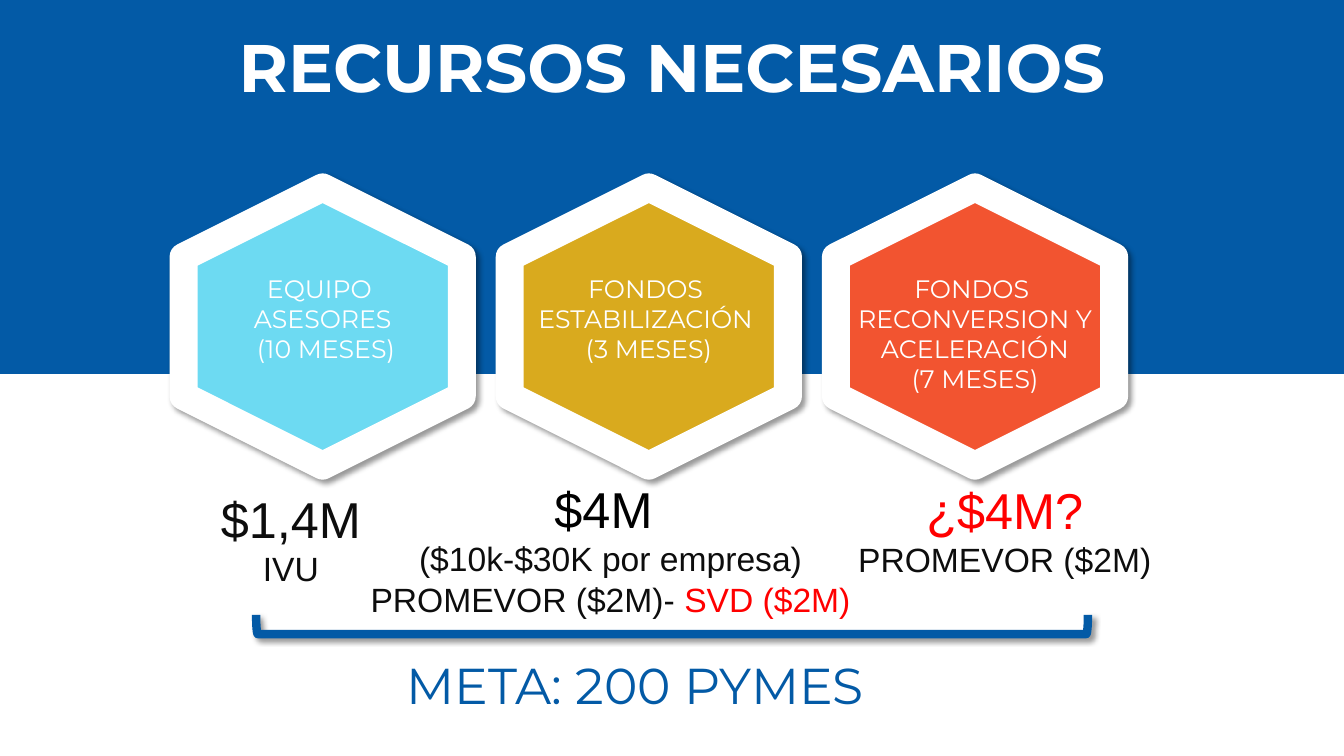
from pptx import Presentation
from pptx.dml.color import RGBColor
from pptx.enum.shapes import MSO_SHAPE as Preset
from pptx.enum.text import MSO_ANCHOR as Anchor, PP_ALIGN as Align
from pptx.oxml import parse_xml
from pptx.oxml.ns import nsdecls, qn
from pptx.util import Inches, Pt

BLUE = RGBColor(0x03, 0x5A, 0xA6)
CYAN = RGBColor(0x6D, 0xDA, 0xF2)
GOLD = RGBColor(0xD9, 0xAA, 0x1E)
ORANGE = RGBColor(0xF2, 0x54, 0x30)
WHITE = RGBColor(0xFF, 0xFF, 0xFF)
BLACK = RGBColor(0, 0, 0)
INK = RGBColor(0x0D, 0x0D, 0x0D)
RED = RGBColor(0xFF, 0, 0)

HEAD_FONT, BODY_FONT = "Montserrat", "Arial"
PAGE_WIDTH, PAGE_HEIGHT = 13.33, 7.5
HEXAGON_SIDE, HEXAGON_STEP = 2.76, 3.235
LABEL_WIDTH = 2.99

# Colour, label lines, box of the amounts, and amount lines as (size, spans)
RESOURCES = [
    (CYAN, ["EQUIPO ", "ASESORES", " (10 MESES)"], (1.81, 4.84, 2.15, 1.0),
     [(36, [("$1,4M", INK)]), (24, [("IVU", INK)])]),
    (GOLD, ["FONDOS ", "ESTABILIZACIÓN ", "(3 MESES)"], (3.5, 4.74, 5.11, 1.4),
     [(36, [("$4M ", BLACK)]),
      (24, [("($10k-$30K por empresa)", INK)]),
      (24, [("PROMEVOR ($2M)-", INK), (" SVD ($2M)", RED)])]),
    (ORANGE, ["FONDOS ", "RECONVERSION Y ACELERACIÓN", "(7 MESES)"],
     (8.29, 4.75, 3.35, 1.0),
     [(36, [("¿$4M?", RED)]), (24, [("PROMEVOR ($2M)", INK)])]),
]


def add_soft_shadow(shape):
    shape.shadow.inherit = False
    effects = shape.element.spPr.find(qn("a:effectLst"))
    effects.append(parse_xml(
        f'<a:outerShdw {nsdecls("a")} blurRad="{Pt(4)}" dist="{Pt(3)}" '
        'dir="2700000" algn="tl" rotWithShape="0"><a:srgbClr val="000000">'
        '<a:alpha val="40000"/></a:srgbClr></a:outerShdw>'))


def add_text(page, box, lines, font, anchor=Anchor.TOP, bold=False,
             spacing=None, inset=0.05):
    """Write centred lines, each given as (size, [(text, colour), ...])."""
    frame = page.shapes.add_textbox(*map(Inches, box)).text_frame
    frame.word_wrap = True
    frame.vertical_anchor = anchor
    frame.margin_top = frame.margin_bottom = Inches(inset)
    for index, (size, spans) in enumerate(lines):
        para = frame.add_paragraph() if index else frame.paragraphs[0]
        para.alignment = Align.CENTER
        para.line_spacing = spacing
        para.font.name = font
        para.font.size = Pt(size)
        para.font.bold = bold
        for text, colour in spans:
            span = para.add_run()
            span.text = text
            span.font.color.rgb = colour


def add_header(page, box):
    left, top, width, height = box
    band = page.shapes.add_shape(Preset.RECTANGLE, *map(Inches, box))
    band.shadow.inherit = False
    band.fill.solid()
    band.fill.fore_color.rgb = BLUE
    band.line.fill.background()
    add_text(page, (left, top + 0.28, width, 0.85),
             [(48, [("RECURSOS NECESARIOS", WHITE)])], HEAD_FONT,
             Anchor.MIDDLE, bold=True, spacing=0.9)


def add_hexagon(page, box, colour, label):
    left, top, width, height = box
    hexagon = page.shapes.add_shape(Preset.HEXAGON, *map(Inches, box))
    hexagon.rotation = 90
    hexagon.fill.solid()
    hexagon.fill.fore_color.rgb = colour
    hexagon.line.color.rgb = WHITE
    hexagon.line.width = Pt(20)
    add_soft_shadow(hexagon)
    add_text(page, (left + (width - LABEL_WIDTH) / 2, top + 0.8, LABEL_WIDTH, 1.31),
             [(18, [(line, WHITE)]) for line in label], HEAD_FONT)


def add_goal(page, box):
    """Draw a bracket that opens upwards, with the goal below it."""
    left, top, width, height = box
    depth = 0.19
    bracket = page.shapes.add_shape(
        Preset.LEFT_BRACKET,
        Inches(left + (width - depth) / 2), Inches(top + (depth - width) / 2),
        Inches(depth), Inches(width))
    bracket.rotation = 270
    bracket.fill.background()
    bracket.line.color.rgb = BLUE
    bracket.line.width = Pt(6)
    add_soft_shadow(bracket)
    add_text(page, (left - 0.18, top + 0.34, width - 0.24, height - 0.34),
             [(36, [("META: 200 PYMES ", BLUE)])], HEAD_FONT)


def main():
    deck = Presentation()
    deck.slide_width, deck.slide_height = Inches(PAGE_WIDTH), Inches(PAGE_HEIGHT)
    page = deck.slides.add_slide(deck.slide_layouts[6])
    add_header(page, (0, 0, PAGE_WIDTH, 3.71))
    for index, (colour, label, amount_box, amounts) in enumerate(RESOURCES):
        left = 1.82 + index * HEXAGON_STEP
        add_hexagon(page, (left, 1.86, HEXAGON_SIDE, HEXAGON_SIDE), colour, label)
        add_text(page, amount_box, amounts, BODY_FONT, inset=0)
    add_goal(page, (2.54, 6.1, 8.25, 1.05))
    deck.save("out.pptx")


if __name__ == "__main__":
    main()
